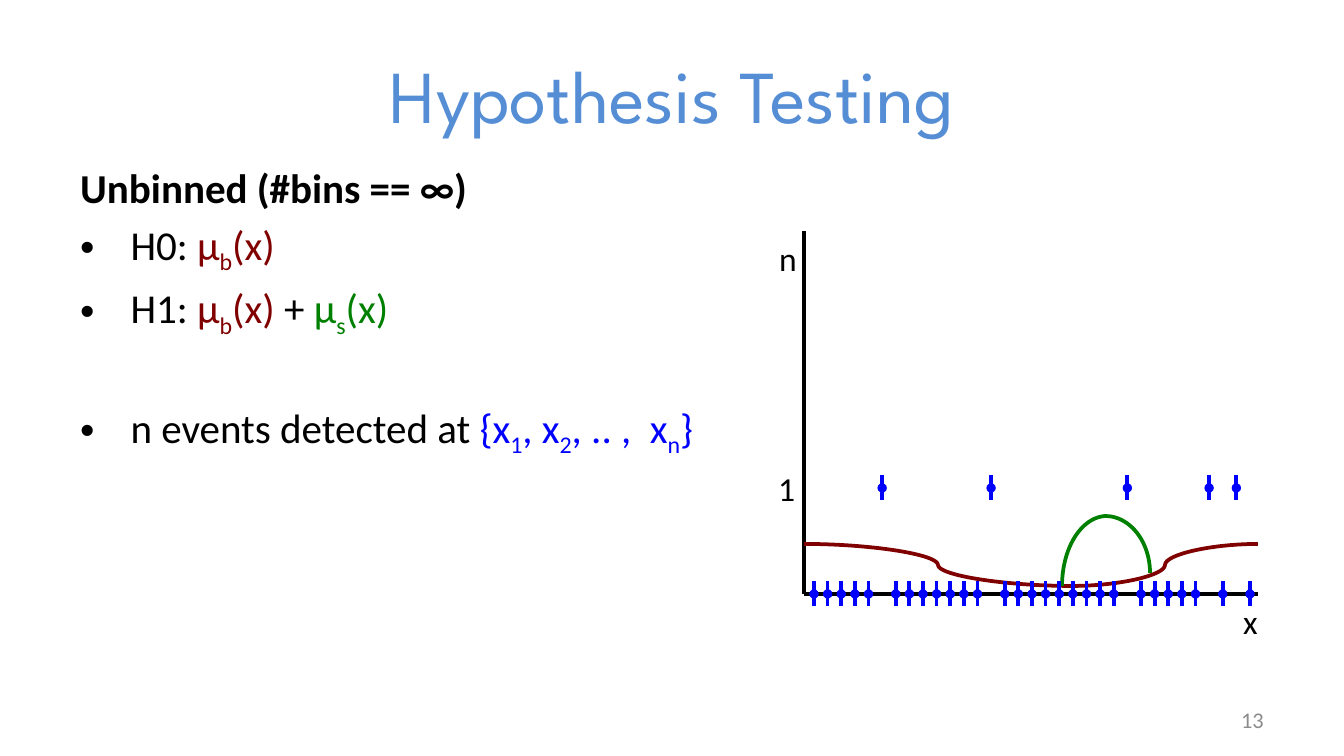
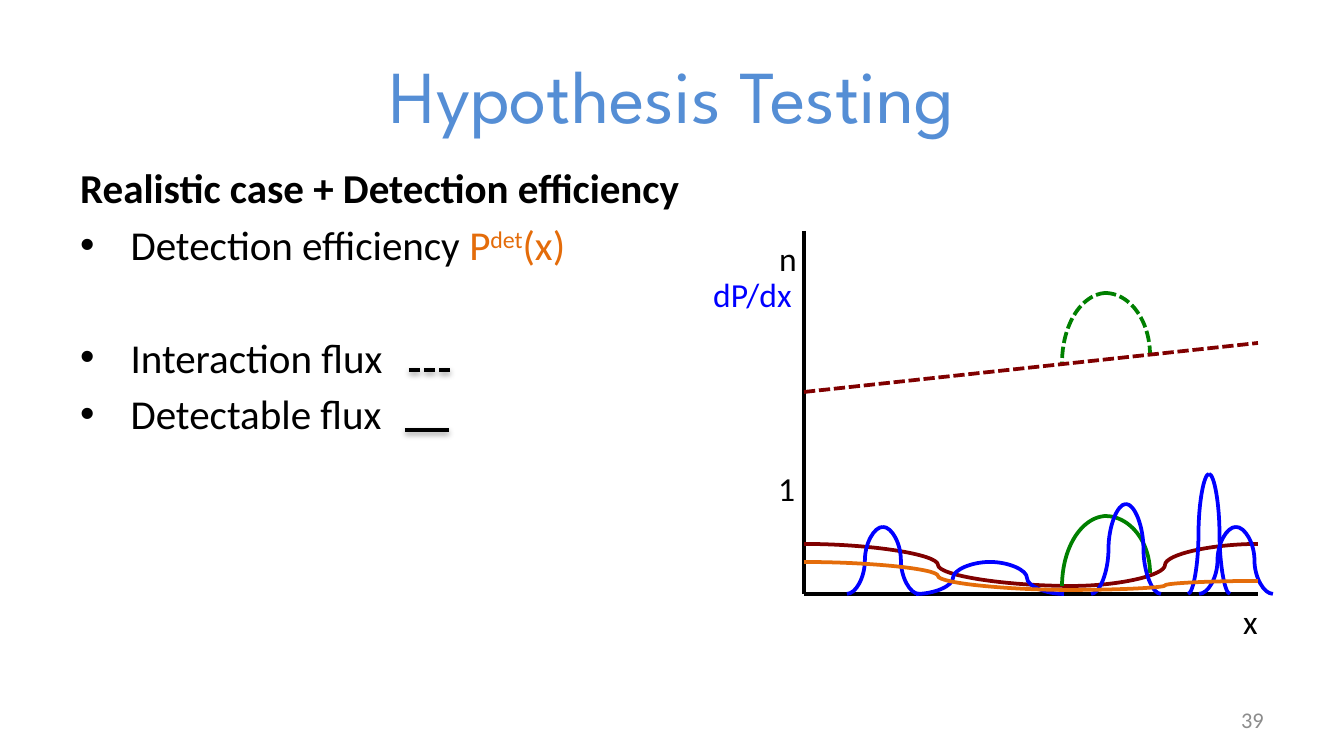
from lxml import etree
from pptx import Presentation
from pptx import util as u
from pptx.dml.color import RGBColor
from pptx.enum import dml, shapes, text
from pptx.oxml.ns import qn

PX = 9144000 / 1344
BLACK = RGBColor(0x00, 0x00, 0x00)
GRAY = RGBColor(0x8C, 0x8C, 0x8C)
TITLE_BLUE = RGBColor(0x55, 0x8E, 0xD5)
BLUE = RGBColor(0x00, 0x00, 0xFF)
MAROON = RGBColor(0x80, 0x00, 0x00)
GREEN = RGBColor(0x00, 0x80, 0x00)
ORANGE = RGBColor(0xE4, 0x6C, 0x0A)
BODY_FONT = "Calibri"
TITLE_FONT = "League Spartan"
SUB, SUPER = -25000, 30000
AXIS_LEFT, AXIS_RIGHT, AXIS_TOP, AXIS_BASE = 804, 1258, 231, 594
VALLEY = 1072
EVENT_SLOTS = 33
DETECTED = (5, 13, 23, 29, 31)
LINE_SPACE, GAP_SPACE = 4, 34
MU_B = [("μ", MAROON), ("b", MAROON, SUB), ("(x)", MAROON)]
MU_S = [("μ", GREEN), ("s", GREEN, SUB), ("(x)", GREEN)]


def px(*lengths):
    """Turn pixel lengths into EMU."""
    return [u.Emu(round(length * PX)) for length in lengths]


def set_font(para, size, name=BODY_FONT, color=BLACK, bold=False):
    """Set the font shared by all runs of a paragraph."""
    para.font.name = name
    para.font.size = u.Pt(size)
    para.font.bold = bold
    para.font.color.rgb = color


def add_title(page, words):
    """Place and format the title placeholder."""
    box = page.shapes.title
    box.left, box.top, box.width, box.height = px(67, 31, 1210, 126)
    box.text_frame.text = words
    box.text_frame.vertical_anchor = text.MSO_ANCHOR.MIDDLE
    para = box.text_frame.paragraphs[0]
    para.alignment = text.PP_ALIGN.CENTER
    set_font(para, 40, TITLE_FONT, TITLE_BLUE)


def add_page_number(page, number):
    """Add the page number at the bottom right."""
    box = page.shapes.add_textbox(*px(964, 700, 313, 40))
    box.text_frame.word_wrap = True
    box.text_frame.vertical_anchor = text.MSO_ANCHOR.MIDDLE
    para = box.text_frame.paragraphs[0]
    para.text = str(number)
    para.alignment = text.PP_ALIGN.RIGHT
    set_font(para, 12, color=GRAY)


def add_label(page, words, left, top, width, color=BLACK):
    """Add an unwrapped plot label."""
    box = page.shapes.add_textbox(*px(left, top, width, 54))
    box.text_frame.word_wrap = False
    box.text_frame.auto_size = text.MSO_AUTO_SIZE.SHAPE_TO_FIT_TEXT
    para = box.text_frame.paragraphs[0]
    para.text = words
    set_font(para, 18, color=color)


def add_bullet(para):
    """Give a paragraph a hanging bullet."""
    properties = para._p.get_or_add_pPr()
    properties.set("marL", "342900")
    properties.set("indent", "-342900")
    etree.SubElement(properties, qn("a:buFont")).set("typeface", "Arial")
    etree.SubElement(properties, qn("a:buChar")).set("char", "•")


def add_span(para, words, color=BLACK, baseline=0):
    """Add a coloured run, raised or lowered by its baseline."""
    span = para.add_run()
    span.text = words
    span.font.color.rgb = color
    if baseline:
        span._r.get_or_add_rPr().set("baseline", str(baseline))


def add_body(page, heading, bullets):
    """Add a bold heading with bullets given as (space before, spans)."""
    box = page.shapes.add_textbox(*px(67, 156, 664, 515))
    frame = box.text_frame
    frame.word_wrap = True
    frame.paragraphs[0].text = heading
    set_font(frame.paragraphs[0], 22, bold=True)
    for space, spans in bullets:
        para = frame.add_paragraph()
        add_bullet(para)
        para.space_before = u.Pt(space)
        set_font(para, 22)
        for span in spans:
            add_span(para, *span)


def style_line(line, color, dashed=False):
    """Format a two-point line."""
    line.color.rgb = color
    line.width = u.Pt(2)
    if dashed:
        line.dash_style = dml.MSO_LINE.SQUARE_DOT


def add_line(parent, start, end, color, dashed=False, curved=False):
    """Add a straight or curved connector and return its effect list."""
    kind = shapes.MSO_CONNECTOR.CURVE if curved else shapes.MSO_CONNECTOR.STRAIGHT
    connector = parent.shapes.add_connector(kind, *px(*start, *end))
    style_line(connector.line, color, dashed)
    return etree.SubElement(connector._element.spPr, qn("a:effectLst"))


def add_legend_line(page, left, top, dashed):
    """Add a short black key line with a soft shadow."""
    effects = add_line(page, (left, top), (left + 44, top), BLACK, dashed)
    shadow = etree.SubElement(effects, qn("a:outerShdw"), blurRad="40000",
                              dist="20000", dir="5400000", rotWithShape="0")
    shade = etree.SubElement(shadow, qn("a:srgbClr"), val=str(BLACK))
    etree.SubElement(shade, qn("a:alpha"), val="38000")


def add_curve_pair(page, left, middle, right, color):
    """Draw two curves that meet at the middle point."""
    for start in (left, right):
        add_line(page, start, middle, color, curved=True)


def add_dome(page, top, right_height, dashed=False):
    """Draw the signal dome from two quarter arcs."""
    for left, height, flipped in ((1060, right_height, False), (1062, 140, True)):
        arc = page.shapes.add_shape(shapes.MSO_SHAPE.ARC, *px(left, top, 90, height))
        arc.shadow.inherit = False
        arc.fill.background()
        style_line(arc.line, GREEN, dashed)
        if flipped:
            arc._element.spPr.find(qn("a:xfrm")).set("flipH", "1")


def add_event(page, x, y):
    """Add a data point with its error bar."""
    group = page.shapes.add_group_shape()
    dot = group.shapes.add_shape(shapes.MSO_SHAPE.OVAL, *px(x - 4, y - 4, 8, 8))
    dot.shadow.inherit = False
    dot.fill.solid()
    dot.fill.fore_color.rgb = BLUE
    dot.line.color.rgb = BLUE
    dot.line.width = u.Pt(0.75)
    add_line(group, (x, y - 13), (x, y + 12), BLUE)


def add_plot(page):
    """Draw the axes, labels, background curve and signal dome."""
    origin = (AXIS_LEFT, AXIS_BASE)
    add_line(page, (AXIS_LEFT, AXIS_TOP), origin, BLACK)
    add_line(page, (AXIS_RIGHT, AXIS_BASE), origin, BLACK)
    add_label(page, "x", 1230, AXIS_BASE, 42)
    add_label(page, "1", 765, 461, 44)
    add_label(page, "n", 766, AXIS_TOP, 44)
    add_curve_pair(page, (AXIS_LEFT, 544), (VALLEY, 586), (AXIS_RIGHT, 544), MAROON)
    add_dome(page, 516, 114)


def add_page(deck, number, heading, bullets):
    """Add a page with the shared title, text and plot."""
    page = deck.slides.add_slide(deck.slide_layouts[5])
    add_title(page, "Hypothesis Testing")
    add_page_number(page, number)
    add_body(page, heading, bullets)
    add_plot(page)
    return page


def add_unbinned_page(deck):
    """Build the page with single events."""
    events = [("{x", BLUE), ("1", BLUE, SUB), (", x", BLUE), ("2", BLUE, SUB),
              (", .. ,  x", BLUE), ("n", BLUE, SUB), ("}", BLUE)]
    page = add_page(deck, 13, "Unbinned (#bins == ∞)", [
        (LINE_SPACE, [("H0: ",), *MU_B]),
        (LINE_SPACE, [("H1: ",), *MU_B, (" + ",), *MU_S]),
        (GAP_SPACE, [("n events detected at ",), *events]),
    ])
    for slot in range(EVENT_SLOTS):
        x = 814 + 436 * slot / (EVENT_SLOTS - 1)
        add_event(page, x, 488 if slot in DETECTED else AXIS_BASE)


def add_efficiency_page(deck):
    """Build the page with smeared events and detection efficiency."""
    page = add_page(deck, 39, "Realistic case + Detection efficiency", [
        (LINE_SPACE, [("Detection efficiency ",), ("P", ORANGE),
                      ("det", ORANGE, SUPER), ("(x)", ORANGE)]),
        (GAP_SPACE, [("Interaction flux",)]),
        (LINE_SPACE, [("Detectable flux",)]),
    ])
    peaks = ((883, 527, 36), (1209, 474, 21), (1236, 527, 37),
             (990, 562, 74), (1126, 504, 35))
    for x, top, reach in peaks:
        add_curve_pair(page, (x - reach, AXIS_BASE), (x, top),
                       (x + reach, AXIS_BASE), BLUE)
    add_label(page, "dP/dx", 700, 267, 109, BLUE)
    add_curve_pair(page, (AXIS_LEFT, 562), (VALLEY, 590), (AXIS_RIGHT, 581), ORANGE)
    add_dome(page, 293, 124, dashed=True)
    add_line(page, (AXIS_LEFT, 392), (AXIS_RIGHT, 343), MAROON, dashed=True)
    add_legend_line(page, 409, 370, dashed=True)
    add_legend_line(page, 405, 430, dashed=False)


def main():
    """Build and save the deck."""
    deck = Presentation()
    deck.slide_width, deck.slide_height = px(1344, 756)
    add_unbinned_page(deck)
    add_efficiency_page(deck)
    deck.save("out.pptx")


if __name__ == "__main__":
    main()
